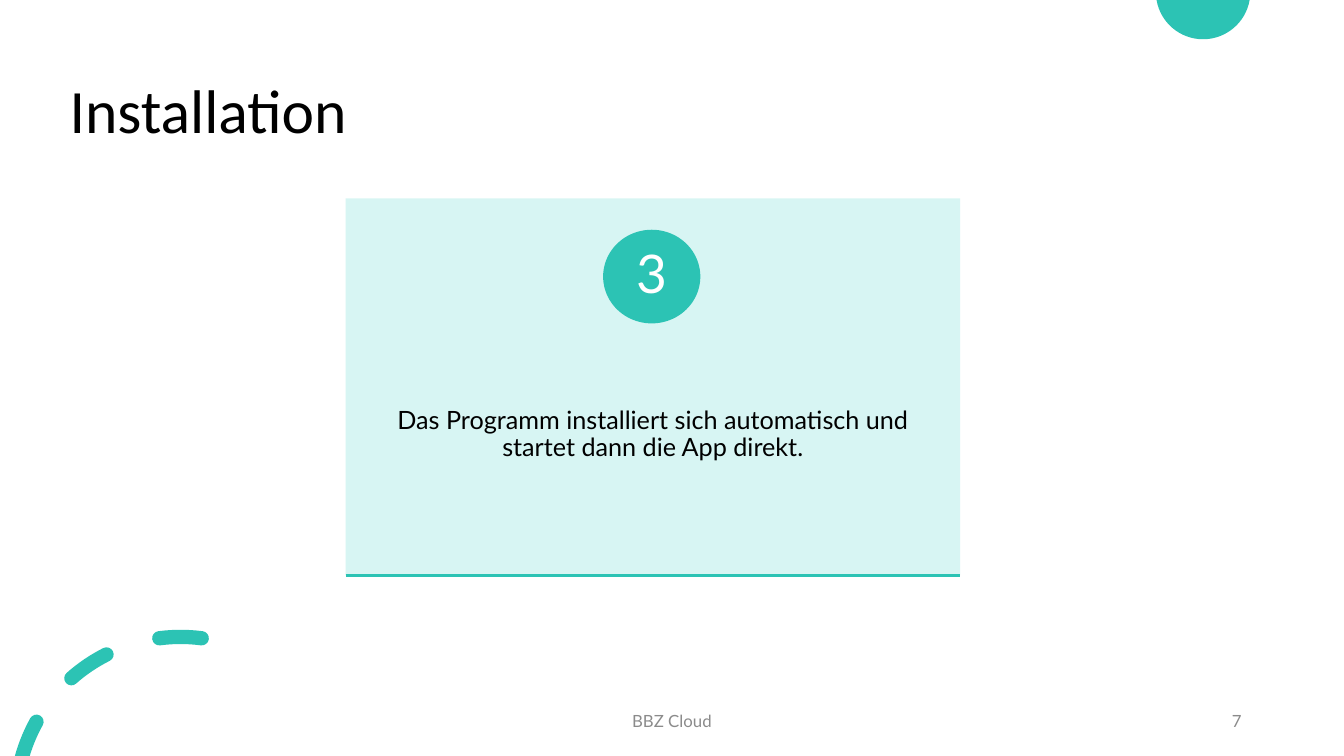
from dataclasses import dataclass
from math import asin, ceil, cos, degrees, radians, sin, tan

from lxml.etree import SubElement
from pptx import Presentation
from pptx.dml.color import RGBColor
from pptx.enum.shapes import MSO_CONNECTOR, MSO_SHAPE
from pptx.enum.text import MSO_ANCHOR, PP_ALIGN
from pptx.oxml.ns import qn
from pptx.util import Cm, Pt


@dataclass(frozen=True)
class Theme:
    teal: str = "2CC3B4"
    mint: str = "D3F5F2"
    black: str = "000000"
    white: str = "FFFFFF"
    gray: str = "8B8B8B"
    head: str = "Calibri"
    body: str = "Lato"
    title: int = 44
    badge: int = 38
    text: int = 18
    small: int = 12


THEME = Theme()
WIDE, HIGH = 33.87, 19.05  # slide size in cm


def paint(shape, color):
    shape.shadow.inherit = False
    shape.fill.solid()
    shape.fill.fore_color.rgb = RGBColor.from_string(color)
    shape.line.fill.background()


def write(shape, text, size, color, font=THEME.body, align=PP_ALIGN.CENTER,
          anchor=MSO_ANCHOR.MIDDLE, space=None):
    frame = shape.text_frame
    frame.text = text
    frame.word_wrap = True
    frame.vertical_anchor = anchor
    para = frame.paragraphs[0]
    para.alignment = align
    para.line_spacing = space
    face = para.runs[0].font
    face.name, face.size = font, Pt(size)
    face.color.rgb = RGBColor.from_string(color)


def arc(x, y, r, start, end):
    """Start point, then three curve points for each quarter turn or less."""
    count = ceil(abs(end - start) / 90)
    turn = radians(end - start) / count
    pull = 4 / 3 * tan(turn / 4)
    points = [(x + r * cos(radians(start)), y + r * sin(radians(start)))]
    for i in range(count):
        a = radians(start) + i * turn
        b = a + turn
        points += [(x + r * (cos(a) - pull * sin(a)), y + r * (sin(a) + pull * cos(a))),
                   (x + r * (cos(b) + pull * sin(b)), y + r * (sin(b) - pull * cos(b))),
                   (x + r * cos(b), y + r * sin(b))]
    return points


def blob(slide, *loops):
    """One filled shape from closed loops of curve points."""
    loops = [[(Cm(x), Cm(y)) for x, y in loop] for loop in loops]
    pen = slide.shapes.build_freeform(*loops[0][0], scale=1.0)
    for i, loop in enumerate(loops):
        if i:
            pen.move_to(*loop[0])
        pen.add_line_segments(loop[1:], close=True)
    shape = pen.convert_to_shape()
    paint(shape, THEME.teal)
    # Join each three line steps into one curve
    steps = list(shape._element.iter(qn("a:lnTo")))
    for curve, mid, last in zip(steps[::3], steps[1::3], steps[2::3]):
        for step in (mid, last):
            curve.append(step[0])
            step.getparent().remove(step)
        curve.tag = qn("a:cubicBezTo")


def dash(end, start=None):
    """Curved stroke with round ends; without a start it leaves the slide."""
    x, y, r, half = 4.55, 20.2, 4.15, 0.18
    outer, inner = r + half, r - half

    def cap(angle, turn):
        spot = arc(x, y, r, angle, angle + 1)[0]
        return arc(*spot, half, turn, turn + 180)[1:]

    def edge(size):
        return start or 180 + degrees(asin((y - HIGH) / size))

    loop = arc(x, y, outer, edge(outer), end) + cap(end, end)
    loop += arc(x, y, inner, end, edge(inner))[1:]
    return loop + cap(start, start + 180) if start else loop


def decor(slide):
    blob(slide, arc(30.32, -0.2, 1.19, 9.68, 170.32))
    blob(slide, dash(209), dash(243.3, 228.5), dash(277.4, 262.6))


def title(slide, text):
    shape = slide.shapes.title
    shape.left, shape.top = Cm(1.5), Cm(1.02)
    shape.width, shape.height = Cm(29.21), Cm(3.68)
    write(shape, text, THEME.title, THEME.black, THEME.head, PP_ALIGN.LEFT,
          space=0.9)


def card(slide, number, text):
    left, top, width, height = Cm(8.71), Cm(5), Cm(15.49), Cm(9.5)
    # Panel with its text
    panel = slide.shapes.add_shape(MSO_SHAPE.RECTANGLE, left, top, width, height)
    paint(panel, THEME.mint)
    tint = panel.fill._xPr.find(qn("a:solidFill"))[0]
    SubElement(tint, qn("a:alpha")).set("val", "90000")
    write(panel, text, THEME.text, THEME.black, anchor=MSO_ANCHOR.TOP, space=0.9)
    frame = panel.text_frame
    frame.margin_left = frame.margin_right = Cm(0.41)
    frame.margin_top, frame.margin_bottom = Cm(5.28), Cm(1.07)
    # Number badge
    badge = slide.shapes.add_shape(MSO_SHAPE.OVAL, Cm(15.2), Cm(5.79),
                                   Cm(2.45), Cm(2.36))
    paint(badge, THEME.teal)
    write(badge, number, THEME.badge, THEME.white, space=0.9)
    frame = badge.text_frame
    frame.margin_left = frame.margin_right = Cm(0.18)
    frame.margin_top = frame.margin_bottom = Cm(0.36)
    # Base line
    base = slide.shapes.add_connector(MSO_CONNECTOR.STRAIGHT, left, top + height,
                                      left + width, top + height)
    base.line.color.rgb = RGBColor.from_string(THEME.teal)
    base.line.width = Pt(2)
    SubElement(base._element.spPr, qn("a:effectLst"))


def note(slide, text, left, width, align):
    box = slide.shapes.add_textbox(Cm(left), Cm(17.65), Cm(width), Cm(1.02))
    write(box, text, THEME.small, THEME.gray, align=align)


def main():
    deck = Presentation()
    deck.slide_width, deck.slide_height = Cm(WIDE), Cm(HIGH)
    slide = deck.slides.add_slide(deck.slide_layouts[5])
    decor(slide)
    title(slide, "Installation")
    card(slide, "3", "Das Programm installiert sich automatisch und "
                     "startet dann die App direkt.")
    # Footer
    note(slide, "BBZ Cloud", 11.22, 11.43, PP_ALIGN.CENTER)
    note(slide, "7", 23.92, 7.62, PP_ALIGN.RIGHT)
    deck.save("out.pptx")


if __name__ == "__main__":
    main()
